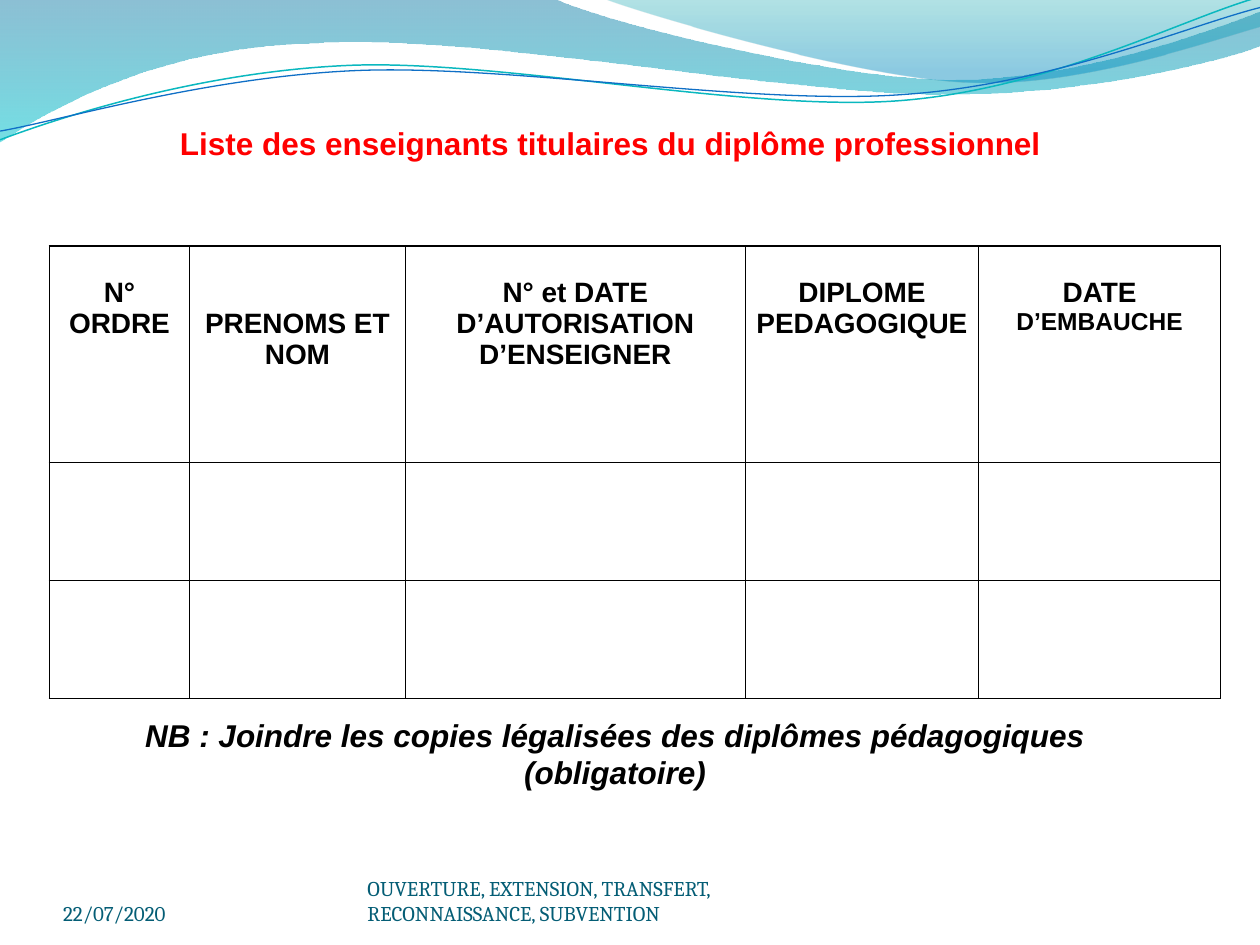
"""Build the slide listing teachers who hold the professional diploma."""
import dataclasses

import lxml.etree
import pptx
import pptx.dml.color
import pptx.enum.text
import pptx.oxml
import pptx.oxml.ns
import pptx.util

Pt = pptx.util.Pt
qn = pptx.oxml.ns.qn
Align = pptx.enum.text.PP_ALIGN
Anchor = pptx.enum.text.MSO_ANCHOR


@dataclasses.dataclass(frozen=True)
class Theme:
    heading: str = "FF0000"
    ink: str = "000000"
    footer: str = "045D75"
    teal_line: str = "0AB8BF"
    blue_line: str = "0F6FC6"
    wide_wave: tuple = ((0, "0074A1", 45), (1, "00C6CF", 55))
    corner_wave: tuple = ((0, "00A1A9", 30), (0.8, "008BBF", 45))
    body_font: str = "Arial"
    footer_font: str = "Cambria"
    large: int = 18
    header: int = 16
    header_small: int = 14
    small: int = 12


def rgb(value):
    return pptx.dml.color.RGBColor.from_string(value)


class SlideBuilder:
    def __init__(self, slide, theme):
        self.slide = slide
        self.theme = theme

    def font(self, font, size, color, name=None, bold=False, italic=False):
        font.name = name or self.theme.body_font
        font.size = Pt(size)
        font.bold, font.italic = bold, italic
        font.color.rgb = rgb(color)

    def curve(self, steps, closed):
        points = [(Pt(x), Pt(y)) for step in steps for x, y in zip(step[::2], step[1::2])]
        builder = self.slide.shapes.build_freeform(*points[0], scale=1.0)
        builder.add_line_segments(points[1:], close=closed)
        shape = builder.convert_to_shape()
        shape.shadow.inherit = False
        segments = iter(list(shape.element.spPr.iter(qn("a:lnTo"))))
        for step in steps[1:]:
            first = next(segments)
            if len(step) == 6:
                first.tag = qn("a:cubicBezTo")
                for _ in range(2):
                    segment = next(segments)
                    first.append(segment[0])
                    segment.getparent().remove(segment)
        return shape

    def wave(self, steps, stops):
        shape = self.curve(steps, True)
        shape.line.fill.background()
        shape.fill.gradient()
        shape.fill.gradient_angle = 270
        for stop, (position, color, _) in zip(shape.fill.gradient_stops, stops):
            stop.position = position
            stop.color.rgb = rgb(color)
        for node, (_, _, opacity) in zip(shape.element.spPr.iter(qn("a:srgbClr")), stops):
            alpha = lxml.etree.SubElement(node, qn("a:alpha"))
            alpha.set("val", str(opacity * 1000))

    def ripple(self, steps, color, width):
        shape = self.curve(steps, False)
        shape.fill.background()
        shape.line.color.rgb = rgb(color)
        shape.line.width = Pt(width)

    def title(self, text, left, top, width, height):
        heading = self.slide.shapes.title
        heading.left, heading.top = Pt(left), Pt(top)
        heading.width, heading.height = Pt(width), Pt(height)
        frame = heading.text_frame
        frame.text = text
        frame.word_wrap = True
        frame.auto_size = pptx.enum.text.MSO_AUTO_SIZE.NONE
        frame.vertical_anchor = Anchor.TOP
        frame.paragraphs[0].alignment = Align.LEFT
        self.font(frame.paragraphs[0].font, self.theme.large, self.theme.heading, bold=True)

    def text(self, text, left, top, width, height):
        frame = self.slide.shapes.add_textbox(
            Pt(left), Pt(top), Pt(width), Pt(height)).text_frame
        frame.word_wrap = True
        frame.text = text
        return frame

    def note(self, text, *box):
        paragraph = self.text(text, *box).paragraphs[0]
        paragraph.alignment = Align.CENTER
        self.font(paragraph.font, self.theme.large, self.theme.ink, bold=True, italic=True)

    def footer(self, text, *box):
        frame = self.text(text, *box)
        frame.vertical_anchor = Anchor.BOTTOM
        frame.margin_left = frame.margin_right = frame.margin_top = frame.margin_bottom = 0
        self.font(frame.paragraphs[0].font, self.theme.small, self.theme.footer,
                  self.theme.footer_font)

    def borders(self, cell):
        properties = cell._tc.get_or_add_tcPr()
        for position, side in enumerate(("lnL", "lnR", "lnT", "lnB")):
            properties.insert(position, pptx.oxml.parse_xml(
                f'<a:{side} {pptx.oxml.ns.nsdecls("a")} w="{Pt(1)}"><a:solidFill>'
                f'<a:srgbClr val="{self.theme.ink}"/></a:solidFill></a:{side}>'))

    def table(self, headers, left, top, widths, heights):
        table = self.slide.shapes.add_table(
            len(heights), len(widths), Pt(left), Pt(top),
            Pt(sum(widths)), Pt(sum(heights))).table
        table.first_row = table.horz_banding = False
        for column, width in zip(table.columns, widths):
            column.width = Pt(width)
        for row, height in zip(table.rows, heights):
            row.height = Pt(height)
        for cell in table.iter_cells():
            cell.fill.background()
            cell.margin_left = cell.margin_right = Pt(5)
            cell.margin_top = cell.margin_bottom = 0
            self.borders(cell)
        for cell, (gap, *parts) in zip(table.rows[0].cells, headers):
            cell.margin_top = Pt(gap)
            paragraph = cell.text_frame.paragraphs[0]
            paragraph.alignment = Align.CENTER
            for text, size in parts:
                run = paragraph.add_run()
                run.text = text
                self.font(run.font, size, self.theme.ink, bold=True)


def main():
    presentation = pptx.Presentation()
    presentation.slide_width, presentation.slide_height = Pt(720), Pt(540)
    theme = Theme()
    page = SlideBuilder(presentation.slides.add_slide(presentation.slide_layouts[5]), theme)

    page.wave((
        (0, 0), (316.8, -0.7), (342.7, 12.2, 478.1, 45.4, 545.8, 45.4),
        (614.2, 45.4, 689.8, 18.7, 720, 6.5), (720.7, 25.9),
        (707.8, 31.7, 626.4, 54.7, 537.1, 54), (447.8, 54, 275, 20.2, 185, 24.5),
        (92.9, 25.9, 33.1, 59.8, -0.7, 81.4)), theme.wide_wave)
    page.wave((
        (344.9, -0.7), (366.5, 7.9, 491, 44.6, 553.7, 46.8),
        (616.3, 49.7, 691.9, 23, 720, 15.1), (720, 0)), theme.corner_wave)
    page.ripple((
        (0, 79.9), (34.6, 67, 113.8, 41, 199.4, 37.4),
        (284.4, 33.8, 427, 64.1, 513.4, 57.6),
        (599.8, 51.1, 675.4, 10.8, 718.6, -1.4)), theme.teal_line, 0.85)
    page.ripple((
        (0, 74.9), (33.8, 69.1, 118.1, 43.9, 203.8, 40.3),
        (290.2, 36.7, 429.8, 60.5, 516.2, 54),
        (601.9, 48.2, 677.5, 15.1, 720, 4.3)), theme.blue_line, 0.75)

    page.title("Liste des enseignants titulaires du diplôme professionnel", 95.6, 67.3, 546, 28.8)
    big, small = theme.header, theme.header_small
    headers = [
        (18, ("N° ORDRE", big)),
        (35.7, ("PRENOMS ET NOM", big)),
        (18, ("N° et DATE D’AUTORISATION D’ENSEIGNER", big)),
        (18, ("DIPLOME PEDAGOGIQUE", big)),
        (18, ("DATE ", big), ("D’EMBAUCHE", small)),
    ]
    page.table(headers, 28.2, 140.6, (80.2, 123.2, 194.4, 133.2, 138.4), (123.6, 67.5, 67.5))
    page.note("NB\u00a0: Joindre les copies légalisées des diplômes pédagogiques (obligatoire)",
              44.8, 405.4, 613.4, 72.7)
    page.footer("22/07/2020", 36, 500.4, 168, 28.8)
    page.footer("OUVERTURE, EXTENSION, TRANSFERT, RECONNAISSANCE, SUBVENTION",
                210, 500.4, 264, 28.8)
    presentation.save("out.pptx")


if __name__ == "__main__":
    main()
